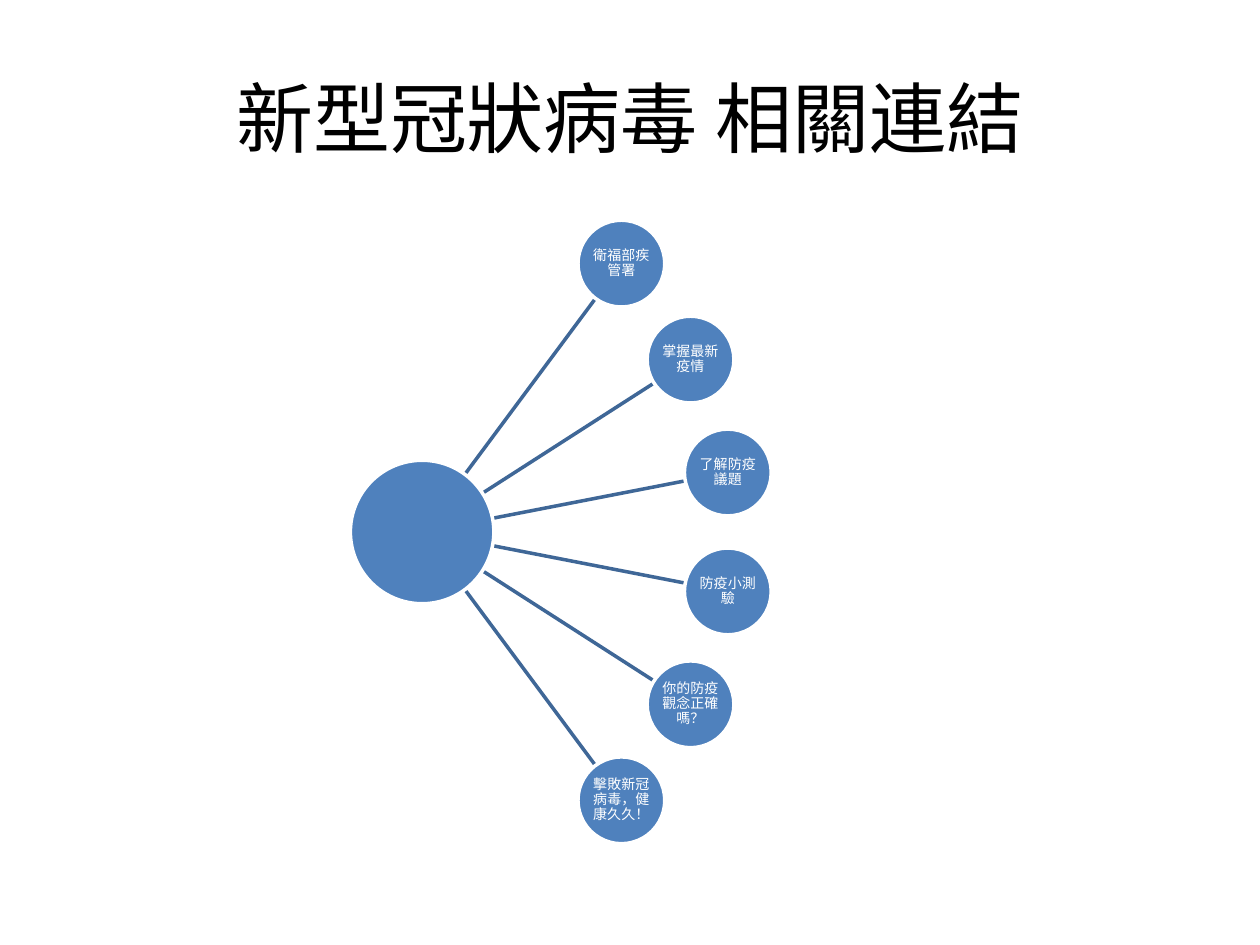
import math

from lxml import etree
from pptx import Presentation
from pptx import util as u
from pptx.dml.color import RGBColor
from pptx.enum import shapes, text
from pptx.oxml import ns

Pt = u.Pt
BLUE, SPOKE, WHITE, BLACK = "4F81BD", "3F6797", "FFFFFF", "000000"
HUB_R, NODE_R, SPOKE_START = 41, 24.8, 33
NODES = [
    ("衛福部疾管署", -53.4, 191),
    ("掌握最新疫情", -32.7, 182.3),
    ("了解防疫議題", -11, 178),
    ("防疫小測驗", 11, 178),
    ("你的防疫觀念正確嗎？", 32.7, 182.3),
    ("擊敗新冠病毒，健康久久！", 53.4, 191),
]


def color(value):
    """Return the colour for a hex string."""
    return RGBColor.from_string(value)


def style(p, size, value):
    """Centre a paragraph and set its font."""
    p.alignment = text.PP_ALIGN.CENTER
    p.font.name = "Calibri"
    p.font.size = Pt(size)
    p.font.color.rgb = color(value)


def add_title(s, box, words):
    """Fill the title placeholder and move it to the box."""
    sp = s.shapes.title
    sp.left, sp.top, sp.width, sp.height = map(Pt, box)
    tf = sp.text_frame
    tf.text = words
    tf.vertical_anchor = text.MSO_ANCHOR.MIDDLE
    style(tf.paragraphs[0], 44, BLACK)


def add_circle(s, x, y, radius, words=""):
    """Draw a white-edged circle around a centre, with an optional label."""
    sp = s.shapes.add_shape(
        shapes.MSO_SHAPE.OVAL,
        *map(Pt, (x - radius, y - radius, 2 * radius, 2 * radius)),
    )
    sp.shadow.inherit = False
    sp.fill.solid()
    sp.fill.fore_color.rgb = color(BLUE)
    sp.line.color.rgb = color(WHITE)
    sp.line.width = Pt(2)
    if words:
        tf = sp.text_frame
        tf.word_wrap = True
        tf.vertical_anchor = text.MSO_ANCHOR.MIDDLE
        tf.margin_left = tf.margin_right = Pt(0.7)
        tf.margin_top = tf.margin_bottom = Pt(0.7)
        tf.text = words
        p = tf.paragraphs[0]
        p.line_spacing = 0.9
        style(p, 8, WHITE)


def add_spoke(s, start, end):
    """Draw a straight line between two points."""
    line = s.shapes.add_connector(
        shapes.MSO_CONNECTOR.STRAIGHT, *map(Pt, (*start, *end))
    )
    line.line.color.rgb = color(SPOKE)
    line.line.width = Pt(2)
    etree.SubElement(line._element.spPr, ns.qn("a:effectLst"))


def add_radial(s, box, nodes):
    """Draw a hub at the left middle of the box and its nodes fanned to the right."""
    left, top, _, height = box
    cx, cy = left + HUB_R, top + height / 2

    def polar(angle, distance):
        """Return the point at an angle and distance from the hub."""
        a = math.radians(angle)
        return cx + distance * math.cos(a), cy + distance * math.sin(a)

    for _, angle, distance in nodes:
        add_spoke(s, polar(angle, SPOKE_START), polar(angle, distance - NODE_R))
    add_circle(s, cx, cy, HUB_R)
    for words, angle, distance in nodes:
        add_circle(s, *polar(angle, distance), NODE_R, words)


def main():
    """Build the slide and save it."""
    prs = Presentation()
    prs.slide_width, prs.slide_height = Pt(720), Pt(540)
    s = prs.slides.add_slide(prs.slide_layouts[5])
    add_title(s, (36, 21.6, 648, 90), "新型冠狀病毒 相關連結")
    add_radial(s, (200.2, 126, 240.4, 356), NODES)
    prs.save("out.pptx")


if __name__ == "__main__":
    main()
